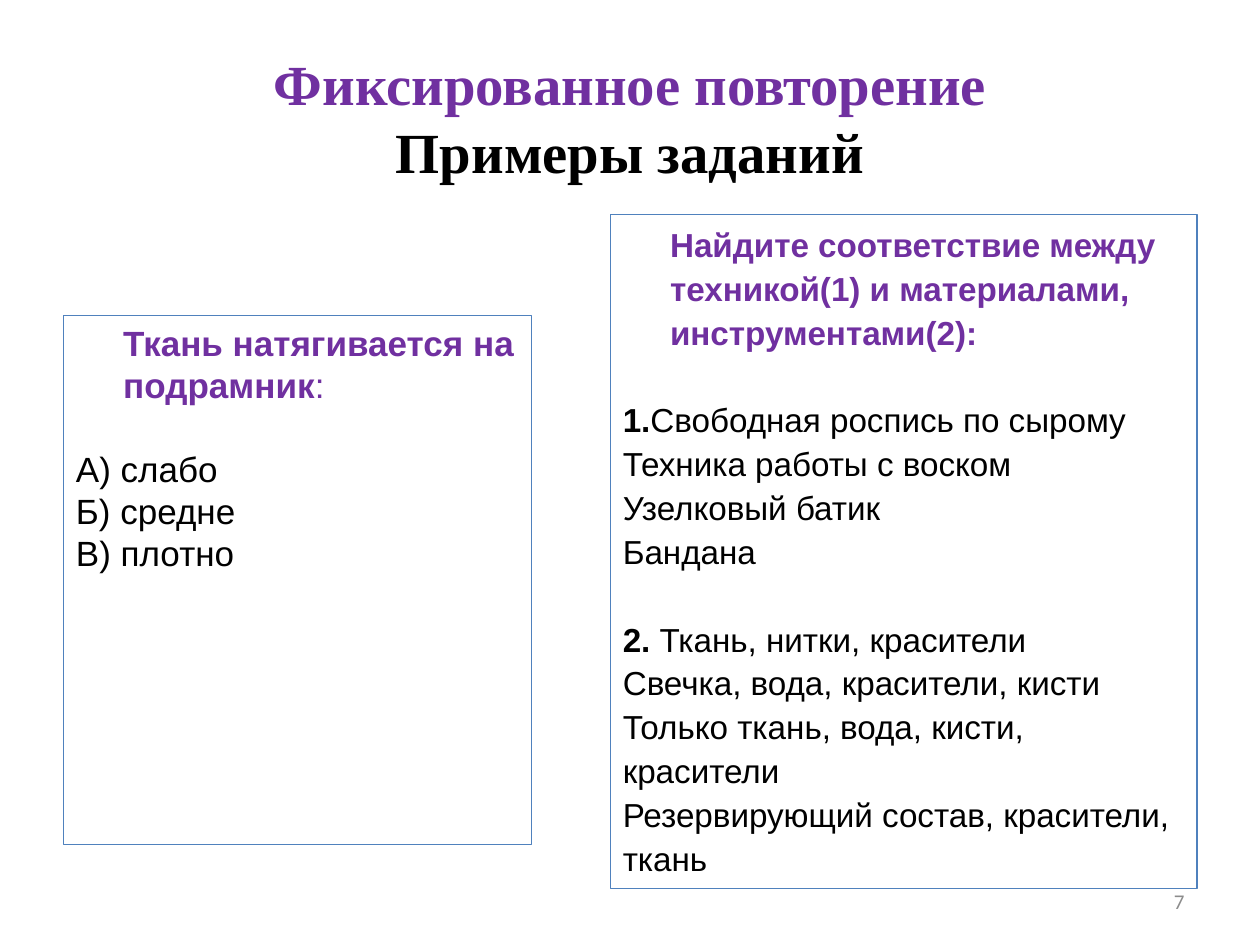
from dataclasses import dataclass

from pptx import Presentation
from pptx.dml.color import RGBColor
from pptx.enum.shapes import MSO_SHAPE
from pptx.enum.text import MSO_ANCHOR, PP_ALIGN
from pptx.util import Pt


@dataclass(frozen=True)
class Theme:
    """Colours, fonts and type sizes of the slide."""
    accent: str = "7030A0"
    ink: str = "000000"
    muted: str = "8C8C8C"
    border: str = "4F81BD"
    title_font: str = "Times New Roman"
    body_font: str = "Arial"
    number_font: str = "Calibri"
    title_size: float = 32.4
    left_size: float = 20
    right_size: float = 19
    number_size: float = 12


THEME = Theme()

FABRIC_QUESTION = [("Ткань натягивается на подрамник", True), (":", False)]
FABRIC_GROUPS = [("", ["А) слабо", "Б) средне", "В) плотно"])]
MATCH_QUESTION = [
    ("Найдите соответствие между техникой(1) и материалами, инструментами(2):", True)]
MATCH_GROUPS = [
    ("1.", ["Свободная роспись по сырому", "Техника работы с воском",
            "Узелковый батик", "Бандана"]),
    ("2. ", ["Ткань, нитки, красители", "Свечка, вода, красители, кисти",
             "Только ткань, вода, кисти, красители",
             "Резервирующий состав, красители, ткань"]),
]


def add_run(p, text, font, size, color, bold=False):
    """Append a formatted run to a paragraph."""
    r = p.add_run()
    r.text = text
    r.font.name, r.font.size, r.font.bold = font, Pt(size), bold
    r.font.color.rgb = RGBColor.from_string(color)


def add_text_box(slide, box):
    """Add a wrapping, vertically centred text box and return its frame."""
    tf = slide.shapes.add_textbox(*map(Pt, box)).text_frame
    tf.word_wrap = True
    tf.vertical_anchor = MSO_ANCHOR.MIDDLE
    return tf


def add_title(slide, box, lines):
    """Place the centred title, one paragraph for each coloured line."""
    tf = add_text_box(slide, box)
    for i, (text, color) in enumerate(lines):
        p = tf.add_paragraph() if i else tf.paragraphs[0]
        p.alignment = PP_ALIGN.CENTER
        add_run(p, text, THEME.title_font, THEME.title_size, color, True)


def add_task(slide, box, question, groups, size, spacing, gap):
    """Place a bordered task: an indented question, then groups of lines."""
    sp = slide.shapes.add_shape(MSO_SHAPE.RECTANGLE, *map(Pt, box))
    sp.shadow.inherit = False
    sp.fill.background()
    sp.line.color.rgb = RGBColor.from_string(THEME.border)
    sp.line.width = Pt(0.75)
    tf = sp.text_frame
    tf.word_wrap = True
    tf.vertical_anchor = MSO_ANCHOR.TOP
    p = tf.paragraphs[0]
    p._p.get_or_add_pPr().set("marL", str(Pt(27)))
    for text, bold in question:
        add_run(p, text, THEME.body_font, size, THEME.accent, bold)
    for label, lines in groups:
        for i, text in enumerate(lines):
            p = tf.add_paragraph()
            if i == 0:
                p.space_before = Pt(gap)
                if label:
                    add_run(p, label, THEME.body_font, size, THEME.ink, True)
            add_run(p, text, THEME.body_font, size, THEME.ink)
    for p in tf.paragraphs:
        p.alignment, p.line_spacing = PP_ALIGN.LEFT, spacing


def add_page_number(slide, box, number):
    """Place the right-aligned page number."""
    p = add_text_box(slide, box).paragraphs[0]
    p.alignment = PP_ALIGN.RIGHT
    add_run(p, number, THEME.number_font, THEME.number_size, THEME.muted)


def main():
    """Build the slide and save it."""
    prs = Presentation()
    prs.slide_width, prs.slide_height = Pt(720), Pt(540)
    slide = prs.slides.add_slide(prs.slide_layouts[6])
    add_title(slide, (36, 21.6, 648, 90),
              [("Фиксированное повторение", THEME.accent),
               ("Примеры заданий", THEME.ink)])
    add_task(slide, (36.3, 180.3, 267.5, 302.1), FABRIC_QUESTION, FABRIC_GROUPS,
             THEME.left_size, 1.0, 24)
    add_task(slide, (348.8, 122.4, 335.2, 385.5), MATCH_QUESTION, MATCH_GROUPS,
             THEME.right_size, 1.1, 25)
    add_page_number(slide, (516, 500.5, 168, 28.8), "7")
    prs.save("out.pptx")


if __name__ == "__main__":
    main()
